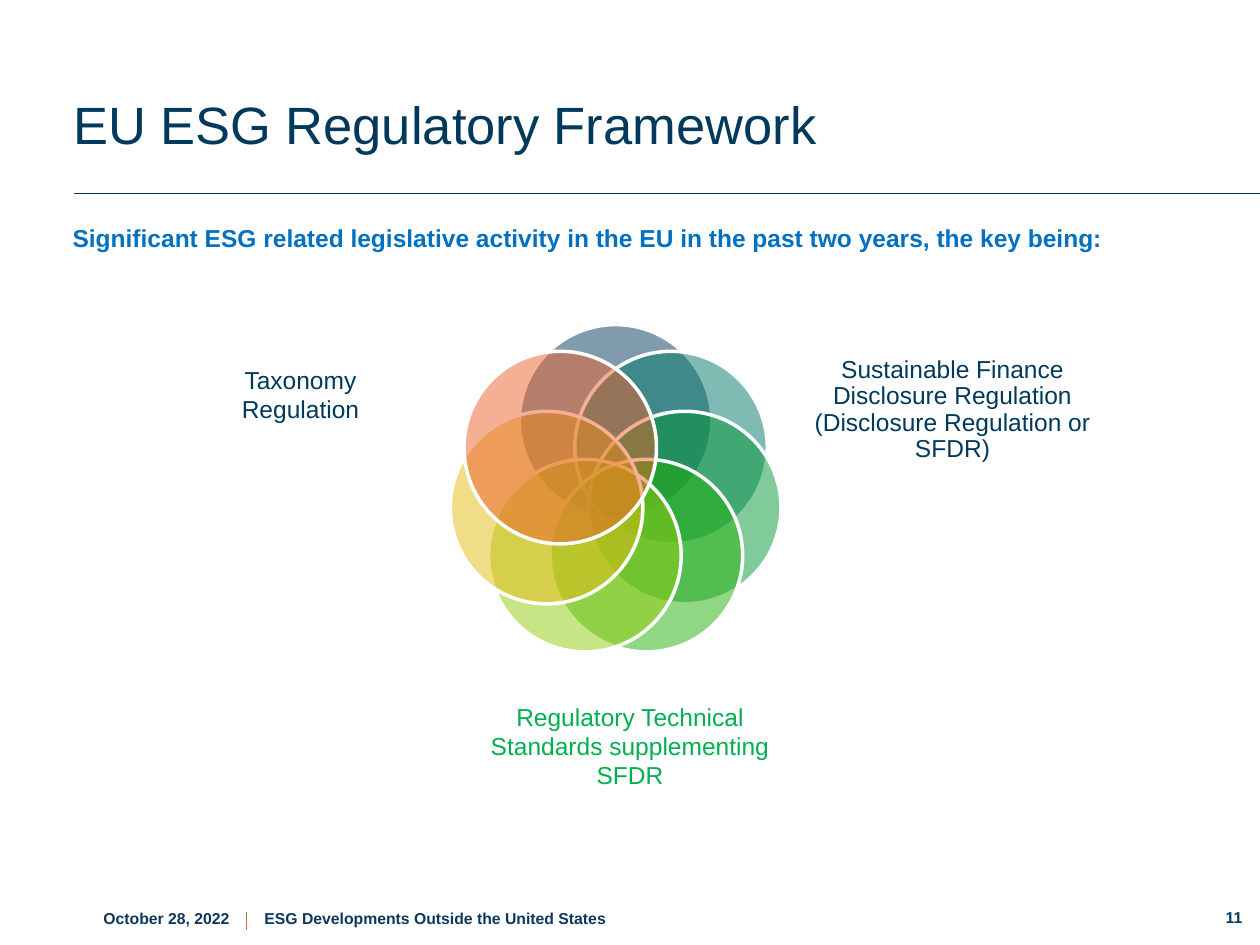
from math import cos, pi, sin

from lxml.etree import SubElement
from pptx import Presentation
from pptx.dml.color import RGBColor
from pptx.enum.shapes import MSO_CONNECTOR, MSO_SHAPE
from pptx.enum.text import MSO_ANCHOR, PP_ALIGN
from pptx.oxml.ns import qn
from pptx.util import Pt

NAVY = RGBColor(0x00, 0x39, 0x5C)
INK = RGBColor(0x0F, 0x37, 0x5C)
BLUE = RGBColor(0x00, 0x70, 0xC0)
LEAF = RGBColor(0x00, 0xB0, 0x50)
SAGE = RGBColor(0x33, 0x99, 0x66)
ORANGE = RGBColor(0xEB, 0x60, 0x2B)
WHITE = RGBColor(0xFF, 0xFF, 0xFF)
PETALS = [
    NAVY,
    RGBColor(0x02, 0x79, 0x69),
    RGBColor(0x04, 0x96, 0x37),
    RGBColor(0x25, 0xB1, 0x08),
    RGBColor(0x90, 0xCC, 0x0C),
    RGBColor(0xE5, 0xBA, 0x12),
    ORANGE,
]
LEFT, MID, RIGHT = PP_ALIGN.LEFT, PP_ALIGN.CENTER, PP_ALIGN.RIGHT
TOP, MIDDLE, BOTTOM = MSO_ANCHOR.TOP, MSO_ANCHOR.MIDDLE, MSO_ANCHOR.BOTTOM

deck = Presentation()
deck.slide_width, deck.slide_height = Pt(720), Pt(540)
slide = deck.slides.add_slide(deck.slide_layouts[6])
shapes = slide.shapes


def add_text(box, lines, size, color, align=LEFT, anchor=TOP,
             inset=(7.2, 3.6), bold=False, spacing=None):
    """Place one paragraph per line; box is left, top, width, height."""
    frame = shapes.add_textbox(*[Pt(v) for v in box]).text_frame
    frame.word_wrap = True
    frame.vertical_anchor = anchor
    frame.margin_left = frame.margin_right = Pt(inset[0])
    frame.margin_top = frame.margin_bottom = Pt(inset[1])
    for i, line in enumerate(lines):
        para = frame.add_paragraph() if i else frame.paragraphs[0]
        para.alignment = align
        if spacing:
            para.line_spacing = spacing
        run = para.add_run()
        run.text = line
        font = run.font
        font.name, font.size, font.bold = "Arial", Pt(size), bold
        font.color.rgb = color


# Rules: title line and the footer divider
for x1, y1, x2, y2, color, width in [
    (42.5, 110.7, 720, 110.7, NAVY, 0.75),
    (141, 521.3, 141, 528.5, SAGE, 0.5),
    (141, 524.2, 141, 531.4, ORANGE, 0.5),
]:
    rule = shapes.add_connector(
        MSO_CONNECTOR.STRAIGHT, Pt(x1), Pt(y1), Pt(x2), Pt(y2))
    rule.line.color.rgb = color
    rule.line.width = Pt(width)
    SubElement(rule._element.spPr, qn("a:effectLst"))

# Seven half-transparent circles, evenly spaced on a ring
HUB_X, HUB_Y, RING, SIZE = 351.8, 281, 40.5, 110
for i, color in enumerate(PETALS):
    turn = 2 * pi * i / len(PETALS)
    x = HUB_X + RING * sin(turn) - SIZE / 2
    y = HUB_Y - RING * cos(turn) - SIZE / 2
    petal = shapes.add_shape(
        MSO_SHAPE.OVAL, Pt(x), Pt(y), Pt(SIZE), Pt(SIZE))
    petal.shadow.inherit = False
    petal.fill.solid()
    petal.fill.fore_color.rgb = color
    petal.line.color.rgb = WHITE
    petal.line.width = Pt(2)
    tint = petal._element.spPr.find(qn("a:solidFill"))[0]
    SubElement(tint, qn("a:alpha")).set("val", "50000")

# Labels around the ring
add_text((110.2, 189.4, 123, 72), ["Taxonomy", "Regulation"],
         14, NAVY, MID, MIDDLE, (0, 0))
add_text((457.2, 185, 174.2, 98.6),
         ["Sustainable Finance Disclosure Regulation "
          "(Disclosure Regulation or SFDR)"],
         14, NAVY, MID, MIDDLE, (0, 0), spacing=0.9)
add_text((265, 397.4, 190, 58.3),
         ["Regulatory Technical Standards supplementing SFDR"],
         14, LEAF, MID)

# Title and lead
add_text((41.8, 23.8, 648, 69), ["EU ESG Regulatory Framework"],
         30, NAVY, anchor=BOTTOM, inset=(0, 3.6), spacing=0.9)
add_text((34.4, 123.8, 656, 24.5),
         ["Significant ESG related legislative activity in the EU "
          "in the past two years, the key being:"],
         14, BLUE, bold=True)

# Footer
for x, y, width, words, color, align in [
    (34.5, 510.5, 103.7, "October 28, 2022", INK, RIGHT),
    (144, 510.5, 516, "ESG Developments Outside the United States", INK, LEFT),
    (642, 509.8, 75, "11", NAVY, RIGHT),
]:
    add_text((x, y, width, 28.8), [words], 9, color, align, MIDDLE, bold=True)

deck.save("out.pptx")
